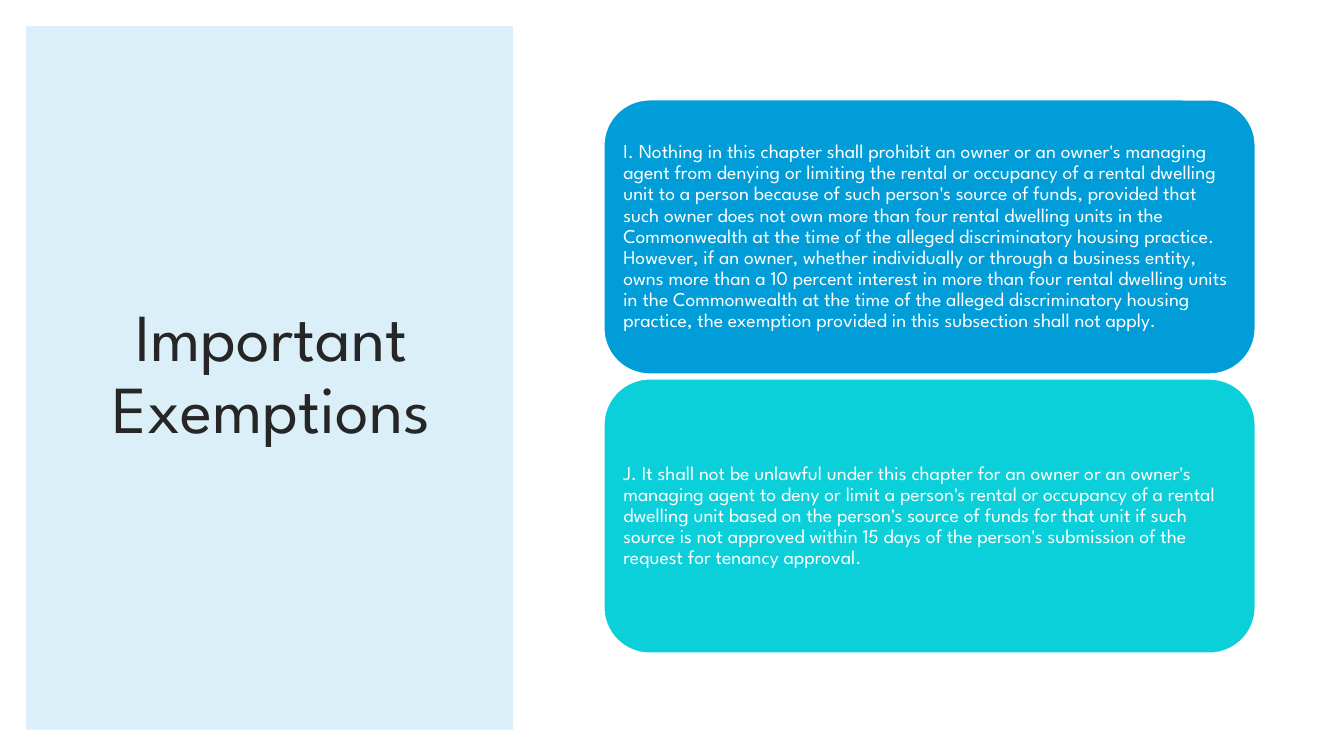
"""Build the Important Exemptions slide: a title panel beside two stacked cards."""
from pptx import Presentation
from pptx.dml.color import RGBColor
from pptx.enum.shapes import MSO_SHAPE
from pptx.enum.text import MSO_ANCHOR, PP_ALIGN
from pptx.util import Inches, Pt

RECT, ROUND = MSO_SHAPE.RECTANGLE, MSO_SHAPE.ROUNDED_RECTANGLE
MIDDLE, LEFT, CENTER = MSO_ANCHOR.MIDDLE, PP_ALIGN.LEFT, PP_ALIGN.CENTER
WIDTH, HEIGHT = 13.33, 7.5
FONT = "League Spartan"
MARGIN, PANEL_W = 0.26, 4.83
CARD_X, CARD_Y, CARD_W, CARD_H, CARD_GAP = 5.99, 0.99, 6.46, 2.72, 0.05
TITLE_FORMAT = {"size": Pt(48), "name": FONT}
BODY_FORMAT = {"size": Pt(14), "name": FONT}

EXEMPTIONS = [
    ("009DD9",
     "I. Nothing in this chapter shall prohibit an owner or an owner's managing "
     "agent from denying or limiting the rental or occupancy of a rental dwelling "
     "unit to a person because of such person's source of funds, provided that "
     "such owner does not own more than four rental dwelling units in the "
     "Commonwealth at the time of the alleged discriminatory housing practice. "
     "However, if an owner, whether individually or through a business entity, "
     "owns more than a 10 percent interest in more than four rental dwelling units "
     "in the Commonwealth at the time of the alleged discriminatory housing "
     "practice, the exemption provided in this subsection shall not apply."),
    ("0BD0D9",
     "J. It shall not be unlawful under this chapter for an owner or an owner's "
     "managing agent to deny or limit a person's rental or occupancy of a rental "
     "dwelling unit based on the person's source of funds for that unit if such "
     "source is not approved within 15 days of the person's submission of the "
     "request for tenancy approval."),
]


def rgb(value):
    """Turn a hex string into a colour."""
    return RGBColor.from_string(value)


def add_block(slide, kind, box, fill):
    """Add a filled shape without shadow or outline."""
    sp = slide.shapes.add_shape(kind, *map(Inches, box))
    sp.shadow.inherit = False
    sp.fill.solid()
    sp.fill.fore_color.rgb = rgb(fill)
    sp.line.fill.background()
    return sp


def write(sp, text, color, align, inset, font_format):
    """Write one wrapped, vertically centred paragraph into a shape."""
    tf = sp.text_frame
    frame_format = {"word_wrap": True, "vertical_anchor": MIDDLE}
    for side in ("left", "right", "top", "bottom"):
        frame_format[f"margin_{side}"] = Inches(inset)
    for name, value in frame_format.items():
        setattr(tf, name, value)
    p = tf.paragraphs[0]
    p.alignment, p.line_spacing = align, 0.9
    r = p.add_run()
    r.text = text
    for name, value in font_format.items():
        setattr(r.font, name, value)
    r.font.color.rgb = rgb(color)


def add_title_panel(slide, title):
    """Add the pale panel and the title centred on it."""
    add_block(slide, RECT, (MARGIN, MARGIN, PANEL_W, HEIGHT - 2 * MARGIN), "DBEFF9")
    sp = slide.shapes.add_textbox(*map(Inches, (0.63, 0.61, 4.12, 6.24)))
    write(sp, title, "262626", CENTER, 0.1, TITLE_FORMAT)


def add_card(slide, row, fill, text):
    """Add a rounded card in the given row of the stack."""
    top = CARD_Y + row * (CARD_H + CARD_GAP)
    sp = add_block(slide, ROUND, (CARD_X, top, CARD_W, CARD_H), fill)
    sp.line.color.rgb = rgb("FFFFFF")
    sp.line.width = Pt(1)
    write(sp, text, "FFFFFF", LEFT, 0.06, BODY_FORMAT)


def main():
    """Build and save the slide."""
    prs = Presentation()
    prs.slide_width, prs.slide_height = Inches(WIDTH), Inches(HEIGHT)
    slide = prs.slides.add_slide(prs.slide_layouts[6])
    add_title_panel(slide, "Important Exemptions")
    for row, (fill, text) in enumerate(EXEMPTIONS):
        add_card(slide, row, fill, text)
    prs.save("out.pptx")


if __name__ == "__main__":
    main()
